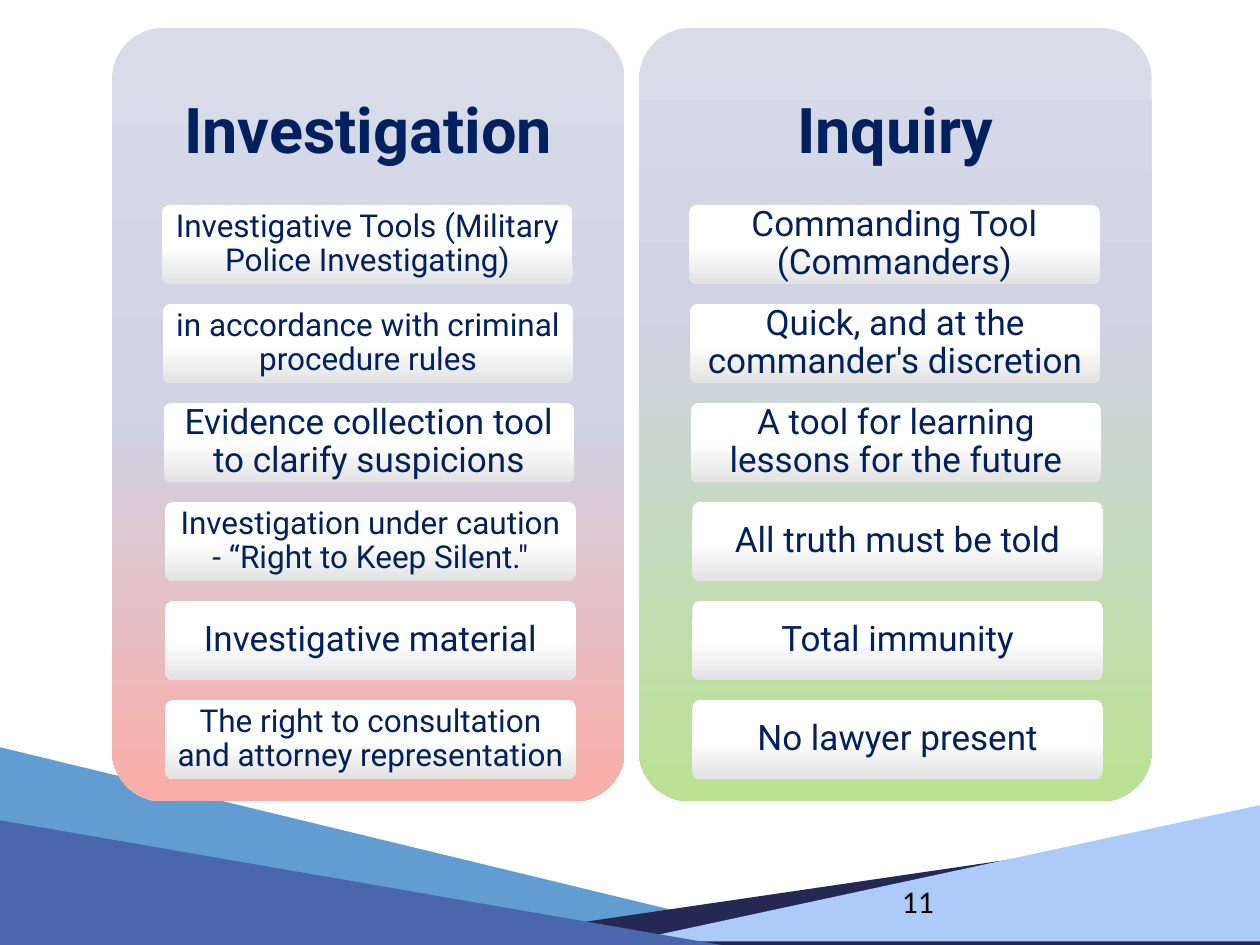
from copy import deepcopy
from dataclasses import dataclass

from pptx import Presentation
from pptx.dml.color import RGBColor
from pptx.enum.shapes import MSO_SHAPE
from pptx.enum.text import MSO_ANCHOR, PP_ALIGN
from pptx.oxml.ns import qn
from pptx.util import Pt

ROUNDED = MSO_SHAPE.ROUNDED_RECTANGLE
TRIANGLE = MSO_SHAPE.RIGHT_TRIANGLE
MIDDLE = MSO_ANCHOR.MIDDLE
CENTER = PP_ALIGN.CENTER
LEFT = PP_ALIGN.LEFT


@dataclass(frozen=True)
class Theme:
    font: str = "Roboto"
    number_font: str = "Calibri"
    ink: str = "002060"
    number_ink: str = "000000"
    sky: str = "629DD1"
    navy: str = "242852"
    pale: str = "ACCBF9"
    royal: str = "4A66AC"
    tile: tuple = ((0, "FFFFFF"), (0.5, "FFFFFF"), (1, "E3E3E3"))
    red_panel: tuple = ((0, "D8DBE8"), (0.5, "CFD3E3"), (1, "FBADA7"))
    green_panel: tuple = ((0, "D8DBE8"), (0.37, "CFD3E3"), (1, "BAE292"))
    heading: int = 36
    large: int = 20
    small: int = 18


theme = Theme()


def write(box, text, size, insets, font=theme.font, color=theme.ink,
          bold=False, align=CENTER, spacing=0.9):
    """Fill a box with one vertically centred paragraph."""
    frame = box.text_frame
    frame.word_wrap = True
    frame.vertical_anchor = MIDDLE
    (frame.margin_left, frame.margin_top,
     frame.margin_right, frame.margin_bottom) = map(Pt, insets)
    para = frame.paragraphs[0]
    para.alignment = align
    para.line_spacing = spacing
    span = para.add_run()
    span.text = text
    span.font.name = font
    span.font.size = Pt(size)
    span.font.bold = bold
    span.font.color.rgb = RGBColor.from_string(color)


def add_card(left, top, width, height, rounding, colors):
    """Add a borderless rounded card with a top-to-bottom gradient."""
    card = page.shapes.add_shape(ROUNDED, Pt(left), Pt(top), Pt(width), Pt(height))
    card.adjustments[0] = rounding
    card.shadow.inherit = False
    card.line.fill.background()
    card.fill.gradient()
    card.fill.gradient_angle = 270
    stop_list = card._element.spPr.find(".//" + qn("a:gsLst"))
    stop_list.append(deepcopy(stop_list[0]))
    for stop, (position, color) in zip(card.fill.gradient_stops, colors):
        stop.position = position
        stop.color.rgb = RGBColor.from_string(color)
    return card


deck = Presentation()
deck.slide_width, deck.slide_height = Pt(720), Pt(540)
page = deck.slides.add_slide(deck.slide_layouts[6])

# Waves along the bottom: left, top, width, height, colour, flipped
waves = [
    (0, 427, 466.6, 113, theme.sky, False),
    (244.1, 470.2, 475.9, 69.8, theme.navy, True),
    (358.6, 460.1, 361.4, 77.8, theme.pale, True),
    (0, 468.7, 450, 77.8, theme.royal, False),
]
for left, top, width, height, color, flipped in waves:
    wave = page.shapes.add_shape(TRIANGLE, Pt(left), Pt(top), Pt(width), Pt(height))
    wave.shadow.inherit = False
    wave.fill.solid()
    wave.fill.fore_color.rgb = RGBColor.from_string(color)
    wave.line.fill.background()
    if flipped:
        wave._element.spPr.xfrm.set("flipH", "1")

# Page number
number = page.shapes.add_textbox(Pt(508.3), Pt(500.4), Pt(162), Pt(28.8))
write(number, "11", theme.small, (7.2, 3.6, 7.2, 3.6), theme.number_font,
      theme.number_ink, align=LEFT, spacing=1)

# Two comparison panels, each with six tiles
columns = [
    (64, "Investigation", theme.red_panel, [
        ("Investigative Tools (Military Police Investigating)", theme.small),
        ("in accordance with criminal procedure rules", theme.small),
        ("Evidence collection tool to clarify suspicions", theme.large),
        ("Investigation under caution - “Right to Keep Silent.\"", theme.small),
        ("Investigative material", theme.large),
        ("The right to consultation and attorney representation", theme.small),
    ]),
    (365.2, "Inquiry", theme.green_panel, [
        ("Commanding Tool (Commanders)", theme.large),
        ("Quick, and at the commander's discretion", theme.large),
        ("A tool for learning lessons for the future", theme.large),
        ("All truth must be told", theme.large),
        ("Total immunity", theme.large),
        ("No lawyer present", theme.large),
    ]),
]
tile_indents = [28.6, 29, 29.5, 30.4, 30.4, 30.4]
tile_top, tile_pitch = 117.1, 56.56

for panel_left, heading, colors, tiles in columns:
    panel = add_card(panel_left, 16, 293, 442, 0.1, colors)
    write(panel, heading, theme.heading, (10, 10, 10, 332), bold=True)
    for row, ((text, size), indent) in enumerate(zip(tiles, tile_indents)):
        tile = add_card(panel_left + indent, tile_top + row * tile_pitch,
                        234.7, 45.2, 0.1, theme.tile)
        write(tile, text, size, (5, 4.3, 5, 4.3))

deck.save("out.pptx")
